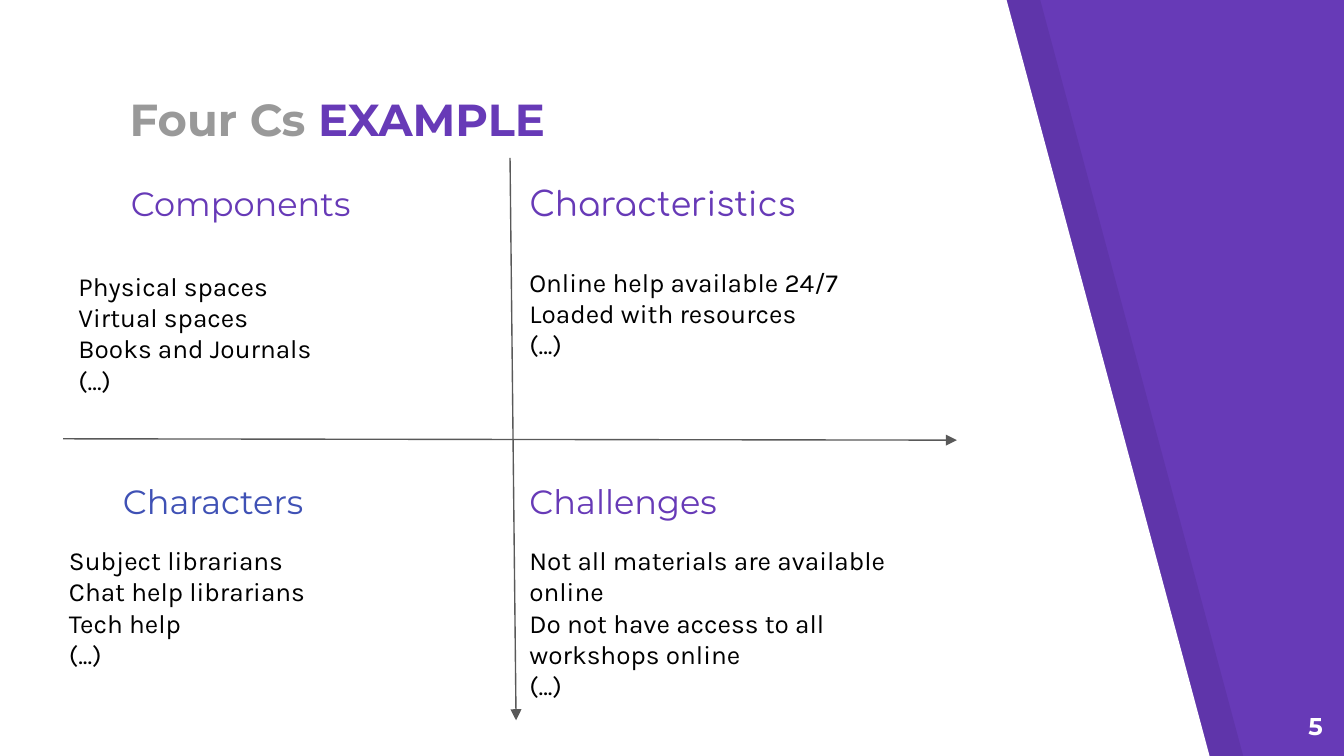
from dataclasses import dataclass

from lxml import etree
from pptx import Presentation
from pptx.dml.color import RGBColor
from pptx.enum.shapes import MSO_CONNECTOR
from pptx.enum.text import MSO_ANCHOR, MSO_AUTO_SIZE, PP_ALIGN
from pptx.oxml.ns import qn
from pptx.util import Inches, Pt

STRAIGHT = MSO_CONNECTOR.STRAIGHT
TOP, BOTTOM = MSO_ANCHOR.TOP, MSO_ANCHOR.BOTTOM
LEFT, RIGHT = PP_ALIGN.LEFT, PP_ALIGN.RIGHT
NO_AUTOFIT = MSO_AUTO_SIZE.NONE


@dataclass(frozen=True)
class Theme:
    purple: str = "673AB7"
    blue: str = "3F51B5"
    gray: str = "999999"
    axis: str = "595959"
    black: str = "000000"
    white: str = "FFFFFF"
    heading_font: str = "Montserrat"
    rounded_font: str = "Comfortaa"
    body_font: str = "Karla"
    title_size: int = 24
    heading_size: int = 18
    body_size: int = 14
    number_size: int = 13


theme = Theme()

# Square grid: 100 columns across, 56.25 rows down
CELL = Inches(0.1)
COLUMNS, ROWS = 100, 56.25


def grid(*cells):
    return [round(cell * CELL) for cell in cells]


def write(shape, lines, font, size, color, bold=False, anchor=TOP, align=LEFT):
    frame = shape.text_frame
    frame.text = "\n".join(lines)
    frame.word_wrap = True
    frame.auto_size = NO_AUTOFIT
    frame.vertical_anchor = anchor
    frame.margin_left = frame.margin_right = CELL
    frame.margin_top = frame.margin_bottom = CELL
    for paragraph in frame.paragraphs:
        paragraph.alignment = align
        for run in paragraph.runs:
            run.font.name = font
            run.font.size = Pt(size)
            run.font.bold = bold
            run.font.color.rgb = RGBColor.from_string(color)


presentation = Presentation()
presentation.slide_width, presentation.slide_height = grid(COLUMNS, ROWS)
slide = presentation.slides.add_slide(presentation.slide_layouts[5])
shapes = slide.shapes

# Purple background
background = slide.background.fill
background.solid()
background.fore_color.rgb = RGBColor.from_string(theme.purple)

# Slanted panels: a faint dark band under the white page
for top_edge, bottom_edge, color in ((77.4, 92.5, theme.black),
                                     (74.9, 90, theme.white)):
    builder = shapes.build_freeform(*grid(0, 0), scale=1.0)
    builder.add_line_segments(
        [grid(0, ROWS), grid(bottom_edge, ROWS), grid(top_edge, 0)], close=True)
    panel = builder.convert_to_shape()
    panel.shadow.inherit = False
    panel.line.fill.background()
    panel.fill.solid()
    panel.fill.fore_color.rgb = RGBColor.from_string(color)
    if color == theme.black:
        tint = panel.fill._xPr.find(".//" + qn("a:srgbClr"))
        etree.SubElement(tint, qn("a:alpha")).set("val", "7000")

# Title in two colours, brought in front of the panels
title = shapes.title
panel._element.addnext(title._element)
title.left, title.top, title.width, title.height = grid(8.65, 7.3, 52.5, 4.5)
write(title, ["Four Cs "], theme.heading_font, theme.title_size, theme.gray,
      bold=True, anchor=BOTTOM)
accent = title.text_frame.paragraphs[0].add_run()
accent.text = "EXAMPLE"
accent.font.name = theme.heading_font
accent.font.size = Pt(theme.title_size)
accent.font.bold = True
accent.font.color.rgb = RGBColor.from_string(theme.purple)

# Slide number
write(shapes.add_textbox(*grid(93.4, 51.9, 6, 4.3)), ["5"], theme.heading_font,
      theme.number_size, theme.white, bold=True, align=RIGHT)

# Axes between the quadrants
for ends in ((37.95, 11.75, 38.4, 53.6), (4.7, 32.65, 71.2, 32.75)):
    axis = shapes.add_connector(STRAIGHT, *grid(*ends))
    axis.line.color.rgb = RGBColor.from_string(theme.axis)
    axis.line.width = Pt(0.75)
    etree.SubElement(axis.line._get_or_add_ln(), qn("a:tailEnd")).set("type", "triangle")
    etree.SubElement(axis._element.spPr, qn("a:effectLst"))

# Quadrants: heading, its font, colour and place, then the items and their place
RIGHT_COLUMN, UPPER_ROW, LOWER_ROW, LOWER_ITEMS = 38.4, 12.6, 34.8, 39.5
quadrants = (
    ("Components", theme.heading_font, theme.purple, (8.75, UPPER_ROW),
     ["Physical spaces", "Virtual spaces", "Books and Journals", "(...)"],
     (4.85, 19.1)),
    ("Characteristics", theme.rounded_font, theme.purple, (RIGHT_COLUMN, UPPER_ROW),
     ["Online help available 24/7", "Loaded with resources", "(...)"],
     (RIGHT_COLUMN, 18.8)),
    ("Characters", theme.heading_font, theme.blue, (8.15, LOWER_ROW),
     ["Subject librarians", "Chat help librarians", "Tech help", "(...)"],
     (4.15, LOWER_ITEMS)),
    ("Challenges", theme.heading_font, theme.purple, (RIGHT_COLUMN, LOWER_ROW),
     ["Not all materials are available", "online",
      "Do not have access to all workshops online", "(...)"],
     (RIGHT_COLUMN, LOWER_ITEMS)),
)
for heading, font, color, heading_place, items, items_place in quadrants:
    write(shapes.add_textbox(*grid(*heading_place, 29.8, 4.5)), [heading],
          font, theme.heading_size, color)
    write(shapes.add_textbox(*grid(*items_place, 32.8, 14)), items,
          theme.body_font, theme.body_size, theme.black)

presentation.save("out.pptx")
